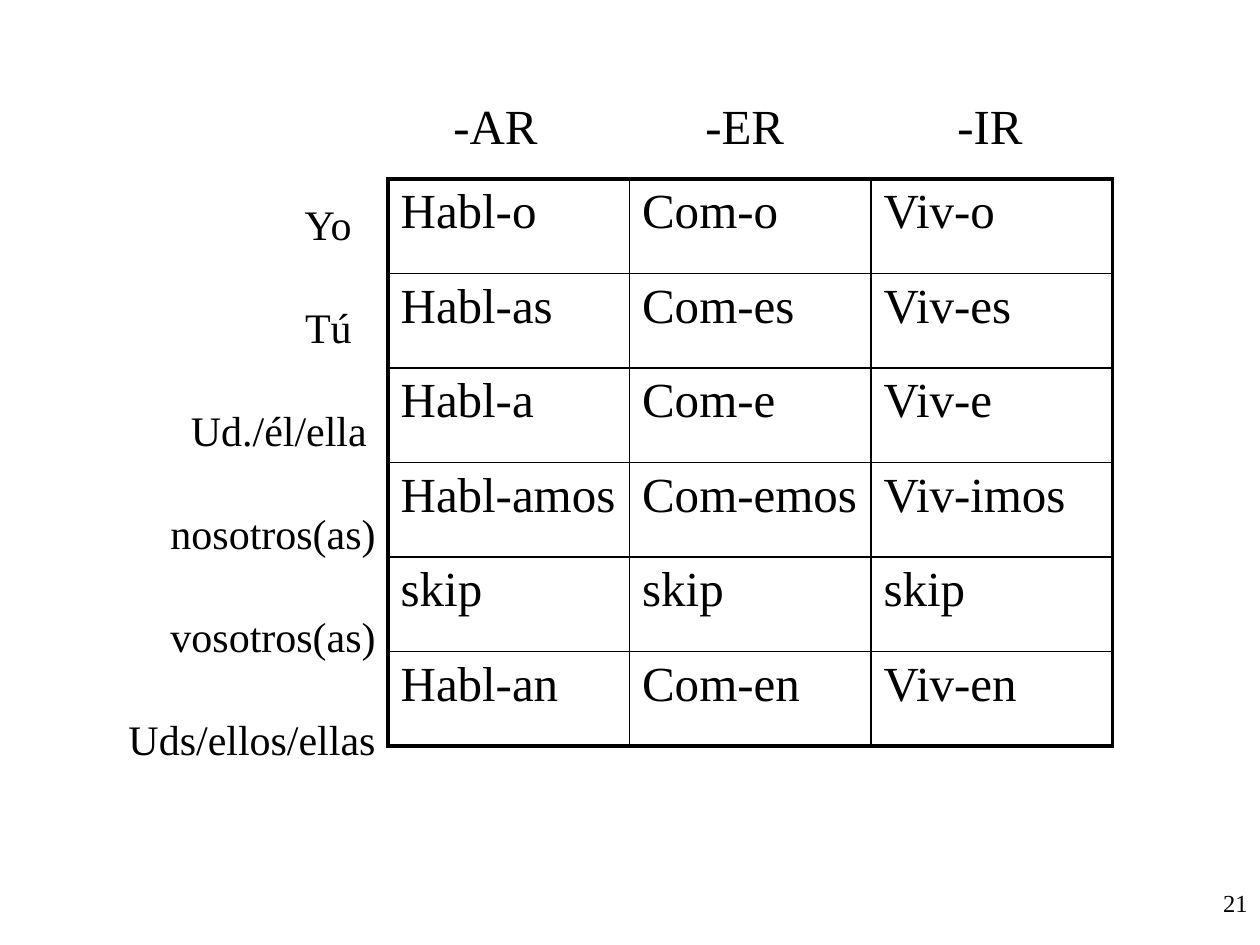
import pptx
import pptx.util
import pptx.dml.color
import pptx.enum.text
import pptx.oxml.ns
import lxml.etree

Inches = pptx.util.Inches
Pt = pptx.util.Pt
ALIGN = pptx.enum.text.PP_ALIGN
FONT = "Times New Roman"
BLACK = "000000"

ENDINGS = ["-AR", "-ER", "-IR"]
VERBS = [
    ["Habl-o", "Com-o", "Viv-o"],
    ["Habl-as", "Com-es", "Viv-es"],
    ["Habl-a", "Com-e", "Viv-e"],
    ["Habl-amos", "Com-emos", "Viv-imos"],
    ["skip", "skip", "skip"],
    ["Habl-an", "Com-en", "Viv-en"],
]
PRONOUNS = [
    ("Yo", 0.19),
    ("Tú", 0.19),
    ("Ud./él/ella", 0.07),
    ("nosotros(as)", 0),
    ("vosotros(as)", 0),
    ("Uds/ellos/ellas", 0),
]


def rgb(value):
    return pptx.dml.color.RGBColor.from_string(value)


def sub(parent, tag, **attrs):
    el = lxml.etree.SubElement(parent, pptx.oxml.ns.qn(tag))
    for name, value in attrs.items():
        el.set(name, str(value))
    return el


def add_run(p, text, size):
    r = p.add_run()
    r.text = text
    r.font.size = Pt(size)
    r.font.name = FONT
    r.font.color.rgb = rgb(BLACK)


def add_box(s, left, top, width, height):
    box = s.shapes.add_textbox(Inches(left), Inches(top), Inches(width), Inches(height))
    box.text_frame.word_wrap = True
    return box.text_frame


def add_page_number(s, number):
    p = add_box(s, 7.92, 7, 2.08, 0.5).paragraphs[0]
    p.alignment = ALIGN.RIGHT
    add_run(p, number, 14)


def add_endings(s):
    p = add_box(s, 2.5, 0.71, 7.33, 0.57).paragraphs[0]
    tabs = sub(p._p.get_or_add_pPr(), "a:tabLst")
    for i in range(len(ENDINGS)):
        sub(tabs, "a:tab", pos=Inches(1 + 2 * i), algn="l")
    add_run(p, "".join("\t" + ending for ending in ENDINGS), 28)


def add_pronouns(s):
    tf = add_box(s, 0.67, 1.53, 2.41, 4.49)
    for i, (pronoun, indent) in enumerate(PRONOUNS):
        p = tf.add_paragraph() if i else tf.paragraphs[0]
        p.alignment = ALIGN.RIGHT
        p._p.get_or_add_pPr().set("marR", str(Inches(indent)))
        if i:
            p.space_before = Pt(30)
        add_run(p, pronoun, 24)


def set_borders(cell, widths):
    tcPr = cell._tc.get_or_add_tcPr()
    for side, width in widths.items():
        ln = sub(tcPr, "a:" + side, w=Pt(width))
        sub(sub(ln, "a:solidFill"), "a:srgbClr", val=BLACK)


def add_verbs(s):
    rows, cols = len(VERBS), len(VERBS[0])
    frame = s.shapes.add_table(rows, cols, Inches(3.08), Inches(1.42), Inches(5.75), Inches(4.5))
    table = frame.table
    table.first_row = False
    table.horz_banding = False
    for i, row in enumerate(VERBS):
        for j, verb in enumerate(row):
            cell = table.cell(i, j)
            add_run(cell.text_frame.paragraphs[0], verb, 28)
            outer = {"lnL": j == 0, "lnR": j == cols - 1, "lnT": i == 0, "lnB": i == rows - 1}
            set_borders(cell, {side: 2.25 if edge else 1 for side, edge in outer.items()})
            cell.fill.background()


def main():
    prs = pptx.Presentation()
    prs.slide_width = Inches(10)
    prs.slide_height = Inches(7.5)
    s = prs.slides.add_slide(prs.slide_layouts[6])
    add_page_number(s, "21")
    add_endings(s)
    add_verbs(s)
    add_pronouns(s)
    prs.save("out.pptx")


if __name__ == "__main__":
    main()
